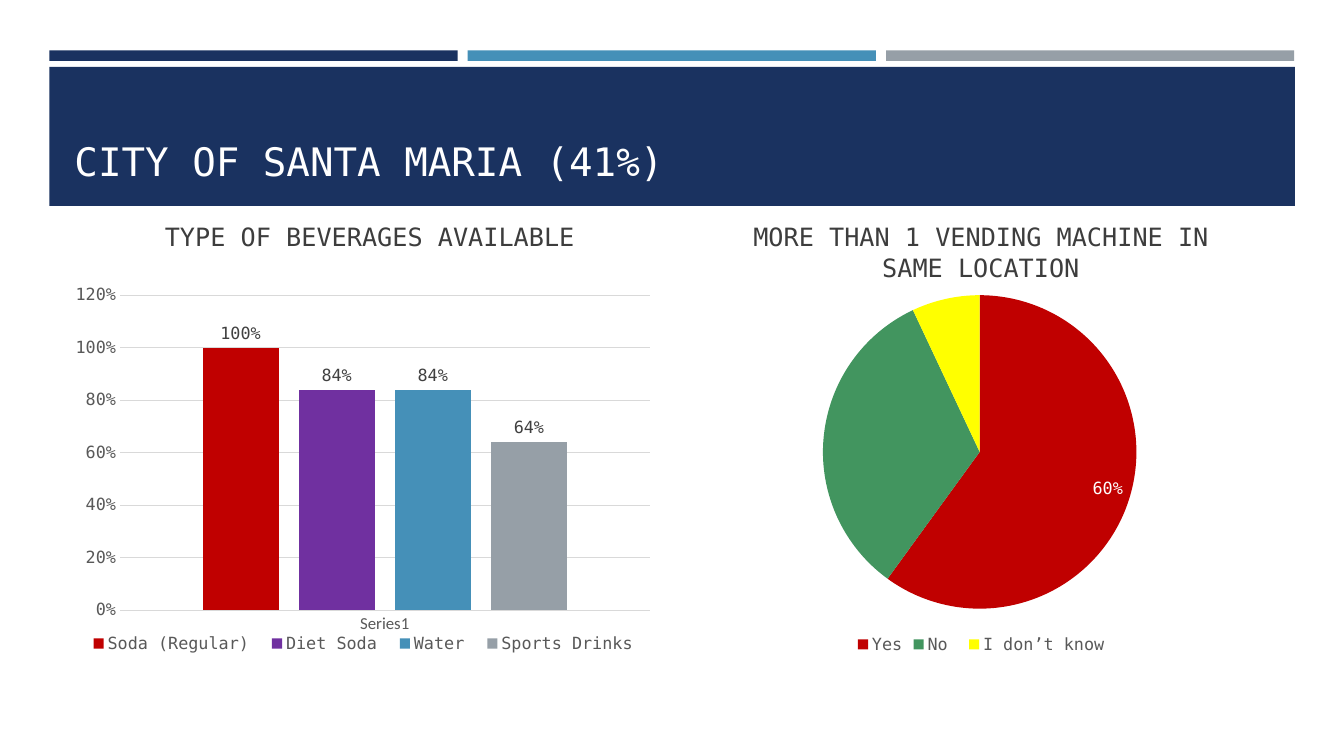
from dataclasses import dataclass

from pptx import Presentation
from pptx.chart.data import CategoryChartData
from pptx.dml.color import RGBColor
from pptx.enum.chart import XL_CHART_TYPE, XL_LABEL_POSITION, XL_LEGEND_POSITION, XL_TICK_MARK
from pptx.enum.shapes import MSO_SHAPE
from pptx.enum.text import MSO_ANCHOR, PP_ALIGN
from pptx.oxml import parse_xml
from pptx.oxml.ns import nsdecls, qn
from pptx.util import Pt

RECT = MSO_SHAPE.RECTANGLE
COLUMN, PIE = XL_CHART_TYPE.COLUMN_CLUSTERED, XL_CHART_TYPE.PIE
OUTSIDE, INSIDE = XL_LABEL_POSITION.OUTSIDE_END, XL_LABEL_POSITION.INSIDE_END
BOTTOM = XL_LEGEND_POSITION.BOTTOM
NO_TICK = XL_TICK_MARK.NONE
ANCHOR_BOTTOM = MSO_ANCHOR.BOTTOM
LEFT, CENTER = PP_ALIGN.LEFT, PP_ALIGN.CENTER


@dataclass(frozen=True)
class Theme:
    mono: str = "DejaVu Sans Mono"
    sans: str = "Calibri"
    navy: str = "1A3260"
    blue: str = "4590B8"
    gray: str = "969FA7"
    red: str = "C00000"
    purple: str = "7030A0"
    green: str = "42955F"
    yellow: str = "FFFF00"
    white: str = "FFFFFF"
    heading: str = "3D3D3D"
    label: str = "404040"
    axis: str = "595959"
    grid: str = "D9D9D9"
    title_size: int = 28
    heading_size: int = 18
    chart_size: int = 12


def rgb(color):
    return RGBColor.from_string(color)


def style_font(font, name, size, color):
    font.name, font.size, font.bold = name, Pt(size), False
    font.color.rgb = rgb(color)


def put_text(tf, lines, *, font, size, color, align=LEFT, anchor=None):
    tf.word_wrap = True
    if anchor is not None:
        tf.vertical_anchor = anchor
    p = tf.paragraphs[0]
    p.alignment = align
    for i, line in enumerate(lines):
        if i:
            p.add_line_break()
        r = p.add_run()
        r.text = line
        style_font(r.font, font, size, color)


def manual_layout(x, y, w, h, inner=False):
    target = '<c:layoutTarget val="inner"/>' if inner else ""
    return parse_xml(
        f'<c:layout {nsdecls("c")}><c:manualLayout>{target}'
        '<c:xMode val="edge"/><c:yMode val="edge"/>'
        f'<c:x val="{x}"/><c:y val="{y}"/><c:w val="{w}"/><c:h val="{h}"/>'
        '</c:manualLayout></c:layout>')


class SlideBuilder:
    def __init__(self, prs, theme):
        self.t = theme
        self.s = prs.slides.add_slide(prs.slide_layouts[5])

    def box(self, left, top, width, height, color):
        sp = self.s.shapes.add_shape(RECT, Pt(left), Pt(top), Pt(width), Pt(height))
        sp.shadow.inherit = False
        sp.fill.solid()
        sp.fill.fore_color.rgb = rgb(color)
        sp.line.fill.background()

    def title(self, text, left, top, width, height):
        sp = self.s.shapes.title
        sp.left, sp.top, sp.width, sp.height = Pt(left), Pt(top), Pt(width), Pt(height)
        put_text(sp.text_frame, [text], font=self.t.mono, size=self.t.title_size,
                 color=self.t.white, anchor=ANCHOR_BOTTOM)
        self.s.shapes._spTree.append(sp._element)

    def heading(self, lines, left, top, width, height):
        sp = self.s.shapes.add_textbox(Pt(left), Pt(top), Pt(width), Pt(height))
        put_text(sp.text_frame, lines, font=self.t.mono, size=self.t.heading_size,
                 color=self.t.heading, align=CENTER)

    def chart(self, kind, cats, series, left, top, plot_area):
        t = self.t
        data = CategoryChartData(number_format="0%")
        data.categories = cats
        for name, values in series:
            data.add_series(name, values)
        chart = self.s.shapes.add_chart(kind, Pt(left), Pt(top), Pt(427), Pt(286), data).chart
        chart.has_title = False
        style_font(chart.font, t.mono, t.chart_size, t.axis)
        chart.has_legend = True
        chart.legend.position = BOTTOM
        chart.legend.include_in_layout = False
        style_font(chart.legend.font, t.mono, t.chart_size, t.axis)
        area = chart._chartSpace.chart.plotArea
        for old in area.findall(qn("c:layout")):
            area.remove(old)
        area.insert(0, manual_layout(*plot_area, inner=True))
        plot = chart.plots[0]
        plot.has_data_labels = True
        labels = plot.data_labels
        labels.show_value, labels.show_percentage = True, False
        labels.number_format, labels.number_format_is_linked = "0%", False
        labels.position = OUTSIDE if kind == COLUMN else INSIDE
        style_font(labels.font, t.mono, t.chart_size, t.label)
        return chart

    def columns(self, cats, series, colors, left, top):
        t = self.t
        chart = self.chart(COLUMN, cats, series, left, top, (0.093, 0.045, 0.886, 0.787))
        legend_pos = chart.legend._element.find(qn("c:legendPos"))
        legend_pos.addnext(manual_layout(0.02, 0.88, 0.96, 0.07))
        plot = chart.plots[0]
        plot.gap_width, plot.overlap, plot.vary_by_categories = 219, -27, False
        for ser, color in zip(plot.series, colors):
            ser.format.fill.solid()
            ser.format.fill.fore_color.rgb = rgb(color)
        for axis, font in ((chart.category_axis, t.sans), (chart.value_axis, t.mono)):
            axis.major_tick_mark = axis.minor_tick_mark = NO_TICK
            style_font(axis.tick_labels.font, font, t.chart_size, t.axis)
        values = chart.value_axis
        values.minimum_scale, values.maximum_scale, values.major_unit = 0, 1.2, 0.2
        values.format.line.fill.background()
        for line in (chart.category_axis.format.line, values.major_gridlines.format.line):
            line.color.rgb = rgb(t.grid)
            line.width = Pt(0.75)

    def pie(self, cats, series, colors, left, top):
        t = self.t
        chart = self.chart(PIE, cats, series, left, top, (0.235, 0.093, 0.525, 0.783))
        plot = chart.plots[0]
        plot.vary_by_categories = True
        points = plot.series[0].points
        for i, color in enumerate(colors):
            fill = points[i].format.fill
            fill.solid()
            fill.fore_color.rgb = rgb(color)
        first = points[0].data_label
        style_font(first.font, t.mono, t.chart_size, t.white)
        first.position = INSIDE


def main():
    prs = Presentation()
    prs.slide_width, prs.slide_height = Pt(960), Pt(540)
    t = Theme()
    s = SlideBuilder(prs, t)
    for i, color in enumerate((t.navy, t.blue, t.gray)):
        s.box(35.3 + i * 298.8, 36, 291.6, 7.5, color)
    s.box(35.3, 47.7, 889.7, 99.3, t.navy)
    s.title("CITY OF SANTA MARIA (41%)", 46, 57.6, 868, 77.8)
    beverages = [("Soda (Regular)", [1]), ("Diet Soda", [0.84]),
                 ("Water", [0.84]), ("Sports Drinks", [0.64])]
    s.columns(["Series1"], beverages, (t.red, t.purple, t.blue, t.gray), 46, 198)
    s.heading(["TYPE OF BEVERAGES AVAILABLE"], 108.5, 154.8, 311, 29)
    s.pie(["Yes", "No ", "I don’t know"], [("Series 1", [0.6, 0.33, 0.07])],
          (t.red, t.green, t.yellow), 487.4, 184.3)
    s.heading(["MORE THAN 1 VENDING MACHINE IN", "SAME LOCATION"], 527.8, 154.8, 345.6, 51)
    prs.save("out.pptx")


if __name__ == "__main__":
    main()
